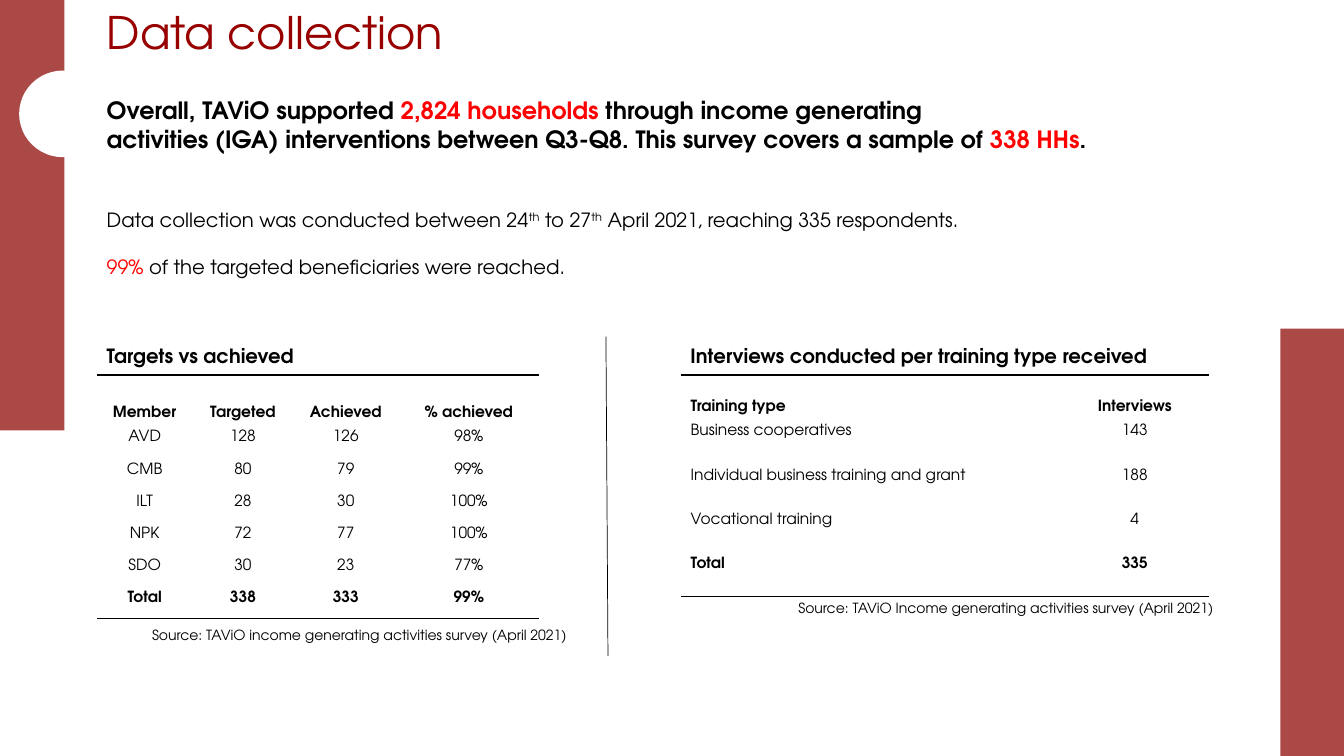
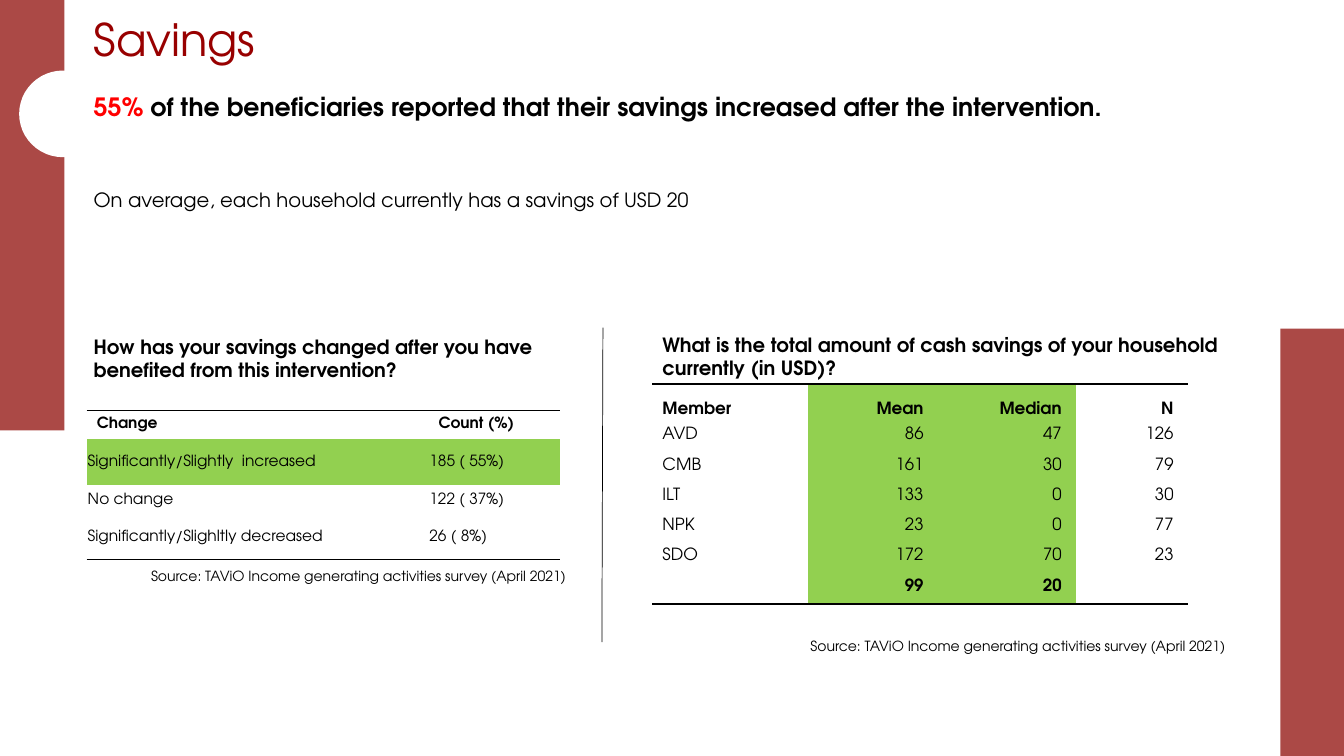
from lxml import etree
from pptx import Presentation
from pptx import util as u
from pptx.dml.color import RGBColor
from pptx.enum import shapes, text
from pptx.oxml import ns

FONT = "TeX Gyre Adventor"
BAND, TITLE, RED, GREEN = "AB4946", "980000", "FF0000", "92D050"
BLACK, WHITE = "000000", "FFFFFF"
NO_STYLE = "{2D5ABB26-0587-4C30-8999-92F81FD0307C}"
NBSP = chr(160)
PROGRAMME = "TAViO"
MEMBERS = ["AVD", "CMB", "ILT", "NPK", "SDO"]
LEFT, CENTER, RIGHT = text.PP_ALIGN.LEFT, text.PP_ALIGN.CENTER, text.PP_ALIGN.RIGHT
TOP, MIDDLE, BOTTOM = text.MSO_ANCHOR.TOP, text.MSO_ANCHOR.MIDDLE, text.MSO_ANCHOR.BOTTOM


def rgb(hex_color):
    return RGBColor.from_string(hex_color)


def inches(*values):
    return [u.Inches(v) for v in values]


def by_member(*rows):
    """Put the member's name in front of each row of values."""
    return [[member, *values] for member, values in zip(MEMBERS, rows)]


def write(p, content, size=14, color=BLACK, bold=False, align=LEFT):
    """Fill a paragraph with a string or a list of (string, overrides)."""
    p.alignment = align
    runs = [(content, {})] if isinstance(content, str) else content
    for words, change in runs:
        r = p.add_run()
        r.text = words
        r.font.name, r.font.size = FONT, u.Pt(size)
        r.font.bold = bold
        r.font.color.rgb = rgb(change.get("color", color))
        if change.get("raised"):
            r._r.get_or_add_rPr().set("baseline", "30000")


class Deck:
    def __init__(self):
        self.prs = Presentation()
        self.prs.slide_width, self.prs.slide_height = inches(13.33, 7.5)
        self.s = None

    def slide(self, title, x, y, w):
        """Start a slide with its title and side bands."""
        self.s = self.prs.slides.add_slide(self.prs.slide_layouts[5])
        sp = self.s.shapes.title
        sp.left, sp.top, sp.width, sp.height = inches(x, y, w, 0.7)
        tf = sp.text_frame
        tf.word_wrap, tf.vertical_anchor = True, MIDDLE
        p = tf.paragraphs[0]
        p.line_spacing = 0.9
        write(p, title, size=32, color=TITLE)
        self.shape(shapes.MSO_SHAPE.RECTANGLE, 0, 0, 0.64, 4.27, BAND)
        self.shape(shapes.MSO_SHAPE.RECTANGLE, 12.7, 3.26, 0.63, 4.24, BAND)
        self.shape(shapes.MSO_SHAPE.OVAL, 0.19, 0.7, 0.87, 0.86, WHITE)

    def shape(self, kind, x, y, w, h, color):
        sp = self.s.shapes.add_shape(kind, *inches(x, y, w, h))
        sp.shadow.inherit = False
        sp.fill.solid()
        sp.fill.fore_color.rgb = rgb(color)
        sp.line.fill.background()

    def text(self, x, y, w, h, *paragraphs, gap=0, **fmt):
        tf = self.s.shapes.add_textbox(*inches(x, y, w, h)).text_frame
        tf.word_wrap = True
        for i, content in enumerate(paragraphs):
            p = tf.add_paragraph() if i else tf.paragraphs[0]
            p.space_before = u.Pt(gap if i else 0)
            write(p, content, **fmt)

    def source(self, x, y, w, word="Income"):
        self.text(x, y, w, 0.27,
                  f"Source: {PROGRAMME} {word} generating activities survey (April 2021)",
                  size=10)

    def divider(self, x1, y1, x2, y2):
        ln = self.s.shapes.add_connector(
            shapes.MSO_CONNECTOR.STRAIGHT, *inches(x1, y1, x2, y2))
        ln.line.color.rgb = rgb(BLACK)
        ln.line.width = u.Pt(0.5)
        etree.SubElement(ln._element.spPr, ns.qn("a:effectLst"))

    def table(self, x, y, widths, heights, rows, aligns, size=11, total=True,
              head_anchor=BOTTOM, body_anchor=TOP, tight=False,
              right=0.1, green=lambda row, col: False):
        """Table ruled above the header and below the last row."""
        frame = self.s.shapes.add_table(
            len(rows), len(widths), *inches(x, y, sum(widths), sum(heights)))
        tbl = frame.table
        tbl.first_row = tbl.horz_banding = False
        frame._element.find(".//" + ns.qn("a:tableStyleId")).text = NO_STYLE
        for col, w in zip(tbl.columns, widths):
            col.width = u.Inches(w)
        last = len(rows) - 1
        for i, values in enumerate(rows):
            tbl.rows[i].height = u.Inches(heights[i])
            for j, value in enumerate(values):
                c = tbl.cell(i, j)
                c.vertical_anchor = body_anchor if i else head_anchor
                c.margin_right = u.Inches(right)
                if tight and i:
                    c.margin_left = c.margin_right = c.margin_top = u.Inches(0.01)
                    c.margin_bottom = 0
                p = c.text_frame.paragraphs[0]
                if value:
                    write(p, value, size=size, align=aligns[j],
                          bold=i == 0 or (total and i == last))
                else:
                    etree.SubElement(p._p, ns.qn("a:endParaRPr"), sz=str(size * 100))
                if green(i, j):
                    c.fill.solid()
                    c.fill.fore_color.rgb = rgb(GREEN)
                else:
                    c.fill.background()
                if i in (0, last):
                    self.rule(c, "a:lnB" if i else "a:lnT")

    def rule(self, cell, side):
        ln = etree.Element(ns.qn(side), w=str(u.Pt(1)))
        fill = etree.SubElement(ln, ns.qn("a:solidFill"))
        etree.SubElement(fill, ns.qn("a:srgbClr"), val=BLACK)
        cell._tc.get_or_add_tcPr().insert(0, ln)


def data_collection(d):
    d.slide("Data collection", 0.96, 0, 10.71)
    # Key message and details
    glued = NBSP.join(["activities", "(IGA)", "interventions", "between"])
    d.text(0.96, 0.9, 12.18, 0.67, [
        (f"Overall, {PROGRAMME} supported ", {}),
        ("2,824 households ", {"color": RED}),
        (f"through income generating {glued} Q3-Q8. This survey covers a sample of ", {}),
        ("338 HHs", {"color": RED}),
        (".", {})], size=17, bold=True)
    d.text(0.96, 2.01, 11.54, 0.81, [
        ("Data collection was conducted between 24", {}),
        ("th", {"raised": True}),
        (" to 27", {}),
        ("th", {"raised": True}),
        (" April 2021, reaching 335 respondents.", {})],
        [("99% ", {"color": RED}),
         ("of the targeted beneficiaries were reached.", {})], gap=16.8)
    d.divider(6.01, 3.34, 6.03, 6.51)
    # Targets
    d.text(0.96, 3.36, 4.45, 0.34, "Targets vs achieved", bold=True)
    d.table(0.96, 3.72, [0.95, 1, 1.04, 1.4], [0.5] + [0.32] * 6, [
        ["Member", "Targeted", "Achieved", "% achieved"],
        *by_member(["128", "126", "98%"],
                   ["80", "79", "99%"],
                   ["28", "30", "100%"],
                   ["72", "77", "100%"],
                   ["30", "23", "77%"]),
        ["Total", "338", "333", "99%"]], [CENTER] * 4)
    d.source(1.41, 6.17, 4.41, word="income")
    # Interviews
    d.text(6.75, 3.36, 5.51, 0.34,
           "Interviews conducted per training type received", bold=True)
    d.table(6.75, 3.72, [3.77, 1.47], [0.44] * 5, [
        ["Training type", "Interviews"],
        ["Business cooperatives", "143"],
        ["Individual business training and grant", "188"],
        ["Vocational training", "4"],
        ["Total", "335"]], [LEFT, CENTER])
    d.source(7.82, 5.9, 4.41)


def savings(d):
    d.slide("Savings", 0.83, 0.07, 11.01)
    # Key message and details
    d.text(0.83, 0.86, 12.37, 0.71, [
        ("55%", {"color": RED}),
        (" of the beneficiaries reported that their savings increased"
         " after the intervention.", {})], size=18, bold=True)
    d.text(0.83, 1.82, 11.4, 0.34,
           "On average, each household currently has a savings of USD 20")
    d.divider(5.98, 3.25, 5.97, 6.37)
    # Change in savings
    d.text(0.83, 3.27, 4.82, 0.57, "How has your savings changed after you have "
           "benefited from this intervention?", bold=True)
    d.table(0.86, 4.07, [3.39, 1.3], [0.28, 0.46, 0.28, 0.46], [
        ["Change", "Count (%)"],
        ["Significantly/Slightly  increased", "185 ( 55%)"],
        ["No change", "122 ( 37%)"],
        ["Significantly/Slighltly decreased", "26 ( 8%)"]],
        [LEFT, LEFT], total=False, head_anchor=MIDDLE, body_anchor=MIDDLE,
        tight=True, green=lambda row, col: row == 1)
    d.source(1.4, 5.58, 4.61)
    # Cash savings by member
    d.text(6.47, 3.25, 5.95, 0.57, "What is the total amount of cash savings of your "
           "household currently (in USD)?", bold=True)
    d.table(6.47, 3.81, [1.54, 1.29, 1.37, 1.11], [0.38] + [0.3] * 6, [
        ["Member", "Mean", "Median", "N"],
        *by_member(["86", "47", "126"],
                   ["161", "30", "79"],
                   ["133", "0", "30"],
                   ["23", "0", "77"],
                   ["172", "70", "23"]),
        ["", "99", "20", ""]], [LEFT, RIGHT, RIGHT, RIGHT], size=12,
        right=0.14, green=lambda row, col: col in (1, 2))
    d.source(7.94, 6.28, 4.33)


def main():
    d = Deck()
    data_collection(d)
    savings(d)
    d.prs.save("out.pptx")


if __name__ == "__main__":
    main()
